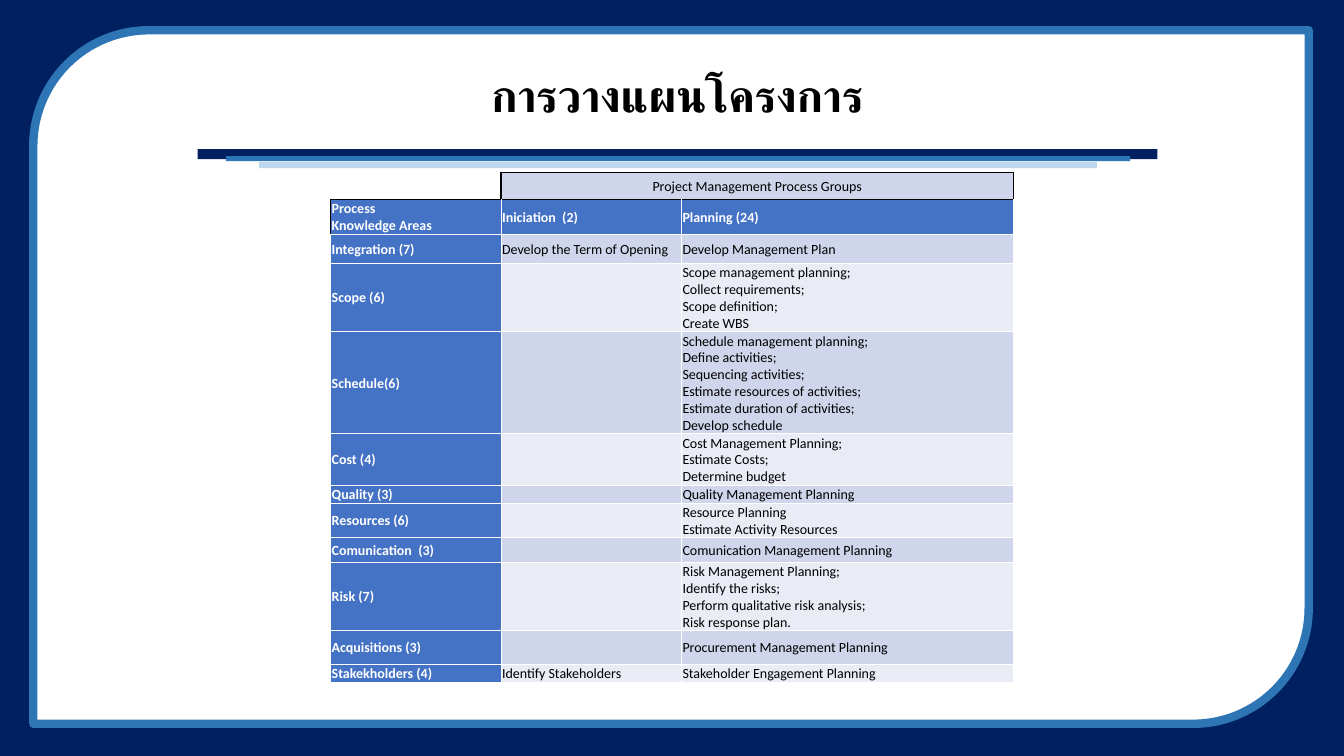
from dataclasses import dataclass

import pptx
import pptx.dml.color
import pptx.enum.shapes
import pptx.enum.text
import pptx.oxml.ns
import pptx.util
from lxml import etree

Inches = pptx.util.Inches
Pt = pptx.util.Pt
MSO_SHAPE = pptx.enum.shapes.MSO_SHAPE
PP_ALIGN = pptx.enum.text.PP_ALIGN
MSO_ANCHOR = pptx.enum.text.MSO_ANCHOR
qn = pptx.oxml.ns.qn


@dataclass(frozen=True)
class Theme:
    navy: str = "002060"
    blue: str = "2E75B6"
    pale_blue: str = "BDD7EE"
    header: str = "4472C4"
    band_dark: str = "CFD5EA"
    band_light: str = "E9EBF5"
    white: str = "FFFFFF"
    black: str = "000000"
    title_font: str = "Arial"
    table_font: str = "Calibri"
    title_size: int = 32
    table_size: int = 10


THEME = Theme()

TITLE_RULES = [
    (1.96, 1.48, 9.52, 0.1, THEME.navy),
    (2.24, 1.55, 8.97, 0.05, THEME.blue),
    (2.57, 1.61, 8.31, 0.06, THEME.pale_blue),
]

COLUMN_WIDTHS = [1.69, 1.79, 3.29]

# Row height, knowledge area, initiation processes, planning processes
PROCESS_ROWS = [
    (0.33, "Process\nKnowledge Areas", "Iniciation  (2)", "Planning (24)"),
    (0.29, "Integration (7)", "Develop the Term of Opening", "Develop Management Plan"),
    (0.66, "Scope (6)", "",
     "Scope management planning;\nCollect requirements;\nScope definition;\nCreate WBS"),
    (0.99, "Schedule(6)", "",
     "Schedule management planning;\nDefine activities;\nSequencing activities;\n"
     "Estimate resources of activities;\nEstimate duration of activities;\nDevelop schedule"),
    (0.5, "Cost (4)", "", "Cost Management Planning;\nEstimate Costs;\nDetermine budget"),
    (0.17, "Quality (3)", "", "Quality Management Planning"),
    (0.33, "Resources (6)", "", "Resource Planning\nEstimate Activity Resources"),
    (0.24, "Comunication  (3)", "", "Comunication Management Planning"),
    (0.66, "Risk (7)", "",
     "Risk Management Planning;\nIdentify the risks;\n"
     "Perform qualitative risk analysis;\nRisk response plan."),
    (0.34, "Acquisitions (3)", "", "Procurement Management Planning"),
    (0.18, "Stakekholders (4)", "Identify Stakeholders", "Stakeholder Engagement Planning"),
]


def rgb(color):
    return pptx.dml.color.RGBColor.from_string(color)


def add_block(s, kind, left, top, width, height, fill, line=None, line_width=0):
    sp = s.shapes.add_shape(kind, Inches(left), Inches(top), Inches(width), Inches(height))
    sp.shadow.inherit = False
    sp.fill.solid()
    sp.fill.fore_color.rgb = rgb(fill)
    if line:
        sp.line.color.rgb = rgb(line)
        sp.line.width = Pt(line_width)
    else:
        sp.line.fill.background()
    return sp


def style_run(r, font, size, color, bold):
    r.font.name = font
    r.font.size = Pt(size)
    r.font.bold = bold
    r.font.color.rgb = rgb(color)


def add_title(s, text):
    sp = s.shapes.add_textbox(Inches(1.96), Inches(0.49), Inches(9.52), Inches(0.97))
    tf = sp.text_frame
    tf.word_wrap = True
    tf.vertical_anchor = MSO_ANCHOR.MIDDLE
    tf.text = text
    p = tf.paragraphs[0]
    p.alignment = PP_ALIGN.CENTER
    p.line_spacing = 0.9
    r = p.runs[0]
    style_run(r, THEME.title_font, THEME.title_size, THEME.black, True)
    etree.SubElement(r.font._element, qn("a:cs"), typeface=THEME.title_font)


def set_borders(cell, black_sides):
    """Draw the named sides (from L, R, T, B) in black and the others in thin white."""
    tcPr = cell._tc.get_or_add_tcPr()
    for side in "LRTB":
        black = side in black_sides
        ln = etree.SubElement(tcPr, qn(f"a:ln{side}"), w=str(Pt(1 if black else 0.5)))
        fill = etree.SubElement(ln, qn("a:solidFill"))
        etree.SubElement(fill, qn("a:srgbClr"), val=THEME.black if black else THEME.white)


def fill_cell(cell, text, fill=None, color=THEME.black, bold=False,
              align=PP_ALIGN.LEFT, black_sides=""):
    cell.margin_left = cell.margin_right = cell.margin_top = Inches(0.01)
    cell.margin_bottom = 0
    cell.vertical_anchor = MSO_ANCHOR.MIDDLE
    set_borders(cell, black_sides)
    if fill:
        cell.fill.solid()
        cell.fill.fore_color.rgb = rgb(fill)
    else:
        cell.fill.background()
    cell.text_frame.text = text
    for p in cell.text_frame.paragraphs:
        p.alignment = align
        for r in p.runs:
            style_run(r, THEME.table_font, THEME.table_size, color, bold)
        if not p.runs:
            # Keeps empty cells from stretching short rows
            etree.SubElement(p._p, qn("a:endParaRPr"), sz=str(THEME.table_size * 100))


def add_process_table(s):
    heights = [0.27] + [row[0] for row in PROCESS_ROWS]
    frame = s.shapes.add_table(len(heights), len(COLUMN_WIDTHS), Inches(3.28), Inches(1.71),
                               Inches(sum(COLUMN_WIDTHS)), Inches(sum(heights)))
    table = frame.table
    table.first_row = table.horz_banding = False
    for column, width in zip(table.columns, COLUMN_WIDTHS):
        column.width = Inches(width)
    for row, height in zip(table.rows, heights):
        row.height = Inches(height)

    table.cell(0, 1).merge(table.cell(0, 2))
    fill_cell(table.cell(0, 0), "", black_sides="RB")
    fill_cell(table.cell(0, 1), "Project Management Process Groups", THEME.band_dark,
              align=PP_ALIGN.CENTER, black_sides="LRTB")
    fill_cell(table.cell(0, 2), "", THEME.band_dark, black_sides="RTB")

    for i, (_, *texts) in enumerate(PROCESS_ROWS, start=1):
        band = THEME.band_light if i % 2 else THEME.band_dark
        for j, text in enumerate(texts):
            heading = i == 1 or j == 0
            sides = ("T" if i == 1 else "") + ("L" if i == 1 and j == 0 else "")
            fill_cell(table.cell(i, j), text, THEME.header if heading else band,
                      THEME.white if heading else THEME.black, heading, black_sides=sides)


def main():
    prs = pptx.Presentation()
    prs.slide_width = Inches(13.33)
    prs.slide_height = Inches(7.5)
    s = prs.slides.add_slide(prs.slide_layouts[6])

    add_block(s, MSO_SHAPE.RECTANGLE, 0, 0, 13.33, 7.5, THEME.navy)
    panel = add_block(s, MSO_SHAPE.ROUND_2_DIAG_RECTANGLE, 0.33, 0.3, 12.65, 6.88,
                      THEME.white, THEME.blue, 6)
    panel.rotation = 180
    for left, top, width, height, color in TITLE_RULES:
        add_block(s, MSO_SHAPE.RECTANGLE, left, top, width, height, color)

    add_title(s, "การวางแผนโครงการ")
    add_process_table(s)
    prs.save("out.pptx")


if __name__ == "__main__":
    main()
